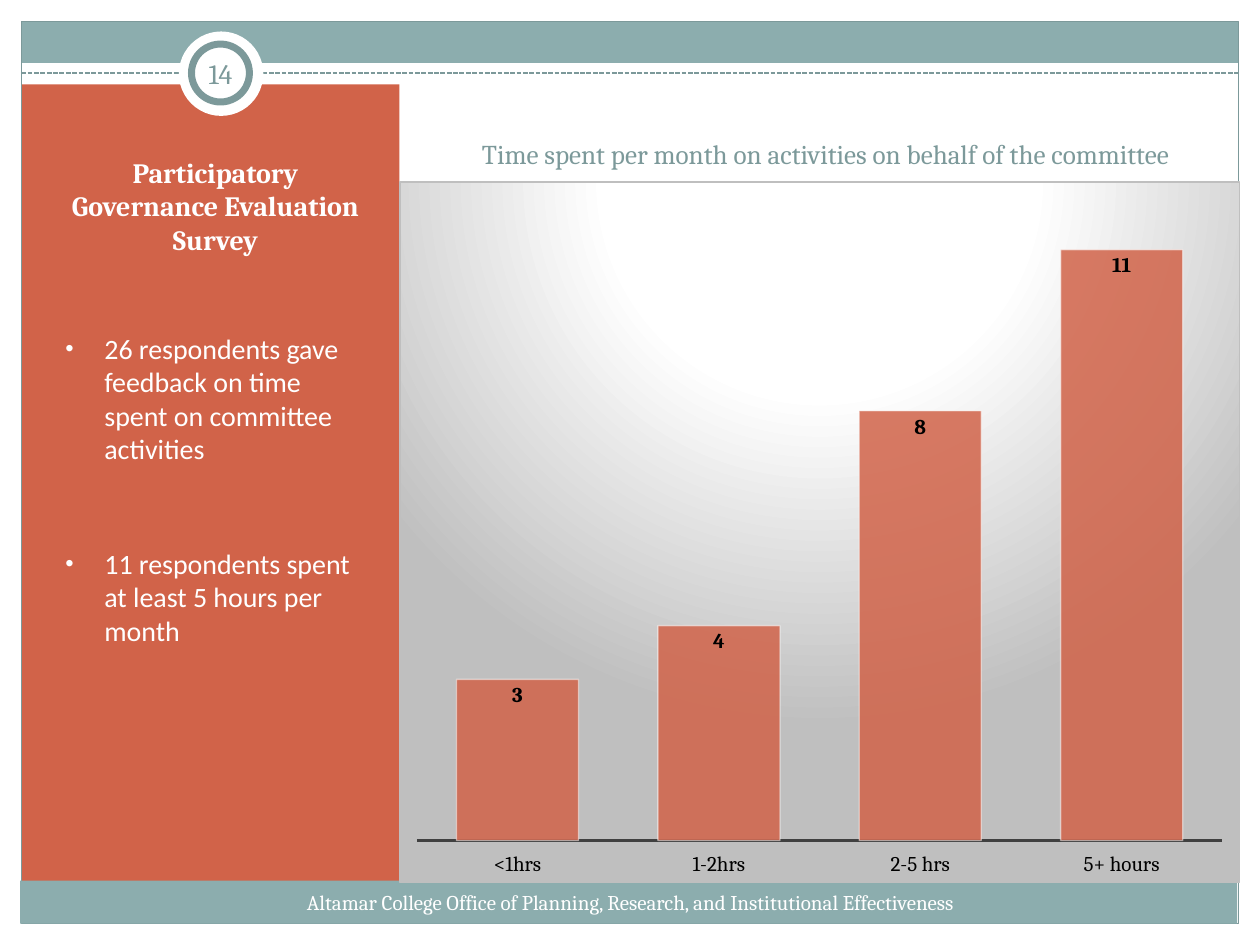
"""Build a survey slide with a sidebar, a numbered badge and a column chart."""
from dataclasses import dataclass
from typing import Optional

from pptx import Presentation
from pptx.chart.chart import Chart
from pptx.chart.data import CategoryChartData
from pptx.dml.color import RGBColor
from pptx.enum.chart import XL_CHART_TYPE, XL_LABEL_POSITION, XL_TICK_LABEL_POSITION, XL_TICK_MARK
from pptx.enum.dml import MSO_LINE
from pptx.enum.shapes import MSO_CONNECTOR, MSO_SHAPE
from pptx.enum.text import MSO_ANCHOR, PP_ALIGN
from pptx.oxml import parse_xml
from pptx.oxml.ns import nsdecls, qn
from pptx.slide import Slide
from pptx.util import Inches, Pt


@dataclass(frozen=True)
class Theme:
    white: str = "FFFFFF"
    black: str = "000000"
    teal: str = "8CADAE"
    slate: str = "7C999A"
    rust: str = "D16349"
    silver: str = "BFBFBF"
    axis: str = "404040"
    serif: str = "Cambria"
    sans: str = "Calibri"
    body_size: float = 16
    heading_size: float = 15.5
    small_size: float = 12


@dataclass(frozen=True)
class Area:
    left: float
    top: float
    width: float
    height: float

    def lengths(self) -> list:
        return [Inches(value) for value in (self.left, self.top, self.width, self.height)]


@dataclass(frozen=True)
class Panel:
    area: Area
    fill: Optional[str] = None
    line: Optional[str] = None
    line_width: float = 0.75
    kind: MSO_SHAPE = MSO_SHAPE.RECTANGLE


THEME = Theme()
PANELS = [
    Panel(Area(0.17, 0.17, 9.66, 0.33), THEME.teal),
    Panel(Area(0, 7.33, 10, 0.17), THEME.white),
    Panel(Area(9.83, 0, 0.17, 7.5), THEME.white),
    Panel(Area(0, 0, 10, 0.13), THEME.white),
    Panel(Area(0, 0, 0.17, 7.5), THEME.white),
    Panel(Area(0.17, 0.67, 3, 6.42), THEME.rust),
    Panel(Area(0.17, 0.17, 9.66, 7.16), line=THEME.slate),
]
BADGE = [
    Panel(Area(1.42, 0.25, 0.67, 0.67), THEME.white, kind=MSO_SHAPE.OVAL),
    Panel(Area(1.52, 0.35, 0.46, 0.46), THEME.white, THEME.slate, 4, MSO_SHAPE.OVAL),
]
FOOTER_BAND = Panel(Area(0.16, 6.99, 9.66, 0.34), THEME.teal)
FINDINGS = [
    "26 respondents gave feedback on time spent on committee activities",
    "11 respondents spent at least 5 hours per month",
]
HOURS = {"<1hrs": 3, "1-2hrs": 4, "2-5 hrs": 8, "5+ hours": 11}


def color(value: str) -> RGBColor:
    return RGBColor.from_string(value)


def add_panel(page: Slide, panel: Panel) -> None:
    shape = page.shapes.add_shape(panel.kind, *panel.area.lengths())
    shape.shadow.inherit = False
    if panel.fill:
        shape.fill.solid()
        shape.fill.fore_color.rgb = color(panel.fill)
    else:
        shape.fill.background()
    if panel.line:
        shape.line.color.rgb = color(panel.line)
        shape.line.width = Pt(panel.line_width)
    else:
        shape.line.fill.background()


def add_dashed_rule(page: Slide) -> None:
    ends = [Inches(value) for value in (0.17, 0.58, 9.83, 0.58)]
    rule = page.shapes.add_connector(MSO_CONNECTOR.STRAIGHT, *ends)
    rule.line.color.rgb = color(THEME.slate)
    rule.line.width = Pt(0.9)
    rule.line.dash_style = MSO_LINE.SQUARE_DOT
    rule.line.dash_style = MSO_LINE.SQUARE_DOT
    rule._element.spPr.append(parse_xml(f"<a:effectLst {nsdecls('a')}/>"))


def add_text(page: Slide, area: Area, *texts: str, size: float = THEME.body_size,
             font: str = THEME.serif, ink: str = THEME.white, bold: bool = False,
             align: PP_ALIGN = PP_ALIGN.CENTER, anchor: MSO_ANCHOR = MSO_ANCHOR.TOP,
             inset: Optional[float] = None, bullets: bool = False, gap: float = 0) -> None:
    frame = page.shapes.add_textbox(*area.lengths()).text_frame
    frame.word_wrap = True
    frame.vertical_anchor = anchor
    if inset is not None:
        frame.margin_left = frame.margin_right = Inches(inset)
        frame.margin_top = frame.margin_bottom = Inches(inset)
    for index, text in enumerate(texts):
        para = frame.add_paragraph() if index else frame.paragraphs[0]
        para.alignment = align
        if index:
            para.space_before = Pt(gap)
        span = para.add_run()
        span.text = text
        span.font.name, span.font.size, span.font.bold = font, Pt(size), bold
        span.font.color.rgb = color(ink)
        if bullets:
            add_bullet(para._p.get_or_add_pPr(), ink)


def add_bullet(properties, ink: str) -> None:
    properties.set("marL", str(Inches(0.31)))
    properties.set("indent", str(-Inches(0.31)))
    for markup in (f'<a:buClr {nsdecls("a")}><a:srgbClr val="{ink}"/></a:buClr>',
                   f'<a:buSzPct {nsdecls("a")} val="85000"/>',
                   f'<a:buFont {nsdecls("a")} typeface="Arial"/>',
                   f'<a:buChar {nsdecls("a")} char="•"/>'):
        properties.append(parse_xml(markup))


def style_backdrop(chart: Chart) -> None:
    stops = "".join(f'<a:gs pos="{place * 1000}"><a:srgbClr val="{value}"/></a:gs>'
                    for place, value in ((0, THEME.white), (39, THEME.white), (100, THEME.silver)))
    backdrop = parse_xml(
        f'<c:spPr {nsdecls("c", "a")}><a:gradFill><a:gsLst>{stops}</a:gsLst>'
        '<a:path path="circle"><a:fillToRect l="50000" t="-80000" r="50000" b="180000"/></a:path>'
        f'</a:gradFill><a:ln w="{Pt(0.75)}"><a:solidFill><a:srgbClr val="{THEME.silver}"/>'
        '</a:solidFill></a:ln></c:spPr>')
    chart._chartSpace.find(qn("c:chart")).addnext(backdrop)


def place_plot(chart: Chart, area: Area) -> None:
    plot_area = chart._chartSpace.find(qn("c:chart")).find(qn("c:plotArea"))
    for layout in plot_area.findall(qn("c:layout")):
        plot_area.remove(layout)
    plot_area.insert(0, parse_xml(
        f'<c:layout {nsdecls("c")}><c:manualLayout><c:layoutTarget val="inner"/>'
        '<c:xMode val="edge"/><c:yMode val="edge"/>'
        f'<c:x val="{area.left}"/><c:y val="{area.top}"/>'
        f'<c:w val="{area.width}"/><c:h val="{area.height}"/></c:manualLayout></c:layout>'))


def add_hours_chart(page: Slide, area: Area) -> None:
    data = CategoryChartData()
    data.categories = list(HOURS)
    data.add_series("Series 1", list(HOURS.values()))
    chart = page.shapes.add_chart(XL_CHART_TYPE.COLUMN_CLUSTERED, *area.lengths(), data).chart
    chart.has_legend = chart.has_title = False
    chart.font.name, chart.font.size = THEME.serif, Pt(10)
    chart.font.color.rgb = color(THEME.black)
    style_backdrop(chart)
    place_plot(chart, Area(0.02, 0.02, 0.96, 0.92))

    values = chart.value_axis
    values.minimum_scale, values.maximum_scale = 0, 12
    values.has_major_gridlines = values.visible = False
    categories = chart.category_axis
    categories.major_tick_mark = categories.minor_tick_mark = XL_TICK_MARK.NONE
    categories.tick_label_position = XL_TICK_LABEL_POSITION.LOW
    categories.format.line.color.rgb = color(THEME.axis)
    categories.format.line.width = Pt(1.5)

    plot = chart.plots[0]
    plot.gap_width, plot.vary_by_categories = 65, False
    series = plot.series[0]
    series.format.fill.solid()
    series.format.fill.fore_color.rgb = color(THEME.rust)
    series.format.line.color.rgb = color(THEME.white)
    series.format.line.width = Pt(0.75)
    paints = series._element.find(qn("c:spPr")).iter(qn("a:srgbClr"))
    for paint, opacity in zip(list(paints), (85, 50)):
        paint.append(parse_xml(f'<a:alpha {nsdecls("a")} val="{opacity * 1000}"/>'))
    labels = series.data_labels
    labels.show_value, labels.position = True, XL_LABEL_POSITION.INSIDE_END
    for font in (categories.tick_labels.font, labels.font):
        font.name, font.size = THEME.serif, Pt(THEME.small_size)
        font.color.rgb = color(THEME.black)
    labels.font.bold = True


def main() -> None:
    deck = Presentation()
    deck.slide_width, deck.slide_height = Inches(10), Inches(7.5)
    page = deck.slides.add_slide(deck.slide_layouts[6])
    for panel in PANELS:
        add_panel(page, panel)
    add_dashed_rule(page)
    for panel in (*BADGE, FOOTER_BAND):
        add_panel(page, panel)
    add_text(page, Area(0.42, 1, 2.58, 1.08), "Participatory Governance Evaluation Survey",
             bold=True, anchor=MSO_ANCHOR.BOTTOM)
    add_text(page, Area(0.42, 2.58, 2.58, 4.12), *FINDINGS, font=THEME.sans,
             align=PP_ALIGN.LEFT, bullets=True, gap=46)
    add_text(page, Area(1.5, 0.34, 0.5, 0.48), "14", ink=THEME.slate,
             anchor=MSO_ANCHOR.MIDDLE, inset=0.05)
    add_text(page, Area(0.17, 7.01, 9.67, 0.4),
             "Altamar College Office of Planning, Research, and Institutional Effectiveness",
             size=THEME.small_size)
    add_text(page, Area(3.26, 1, 6.58, 0.4),
             "Time spent per month on activities on behalf of the committee",
             size=THEME.heading_size, ink=THEME.slate, anchor=MSO_ANCHOR.BOTTOM)
    add_hours_chart(page, Area(3.17, 1.44, 6.67, 5.57))
    deck.save("out.pptx")


if __name__ == "__main__":
    main()
